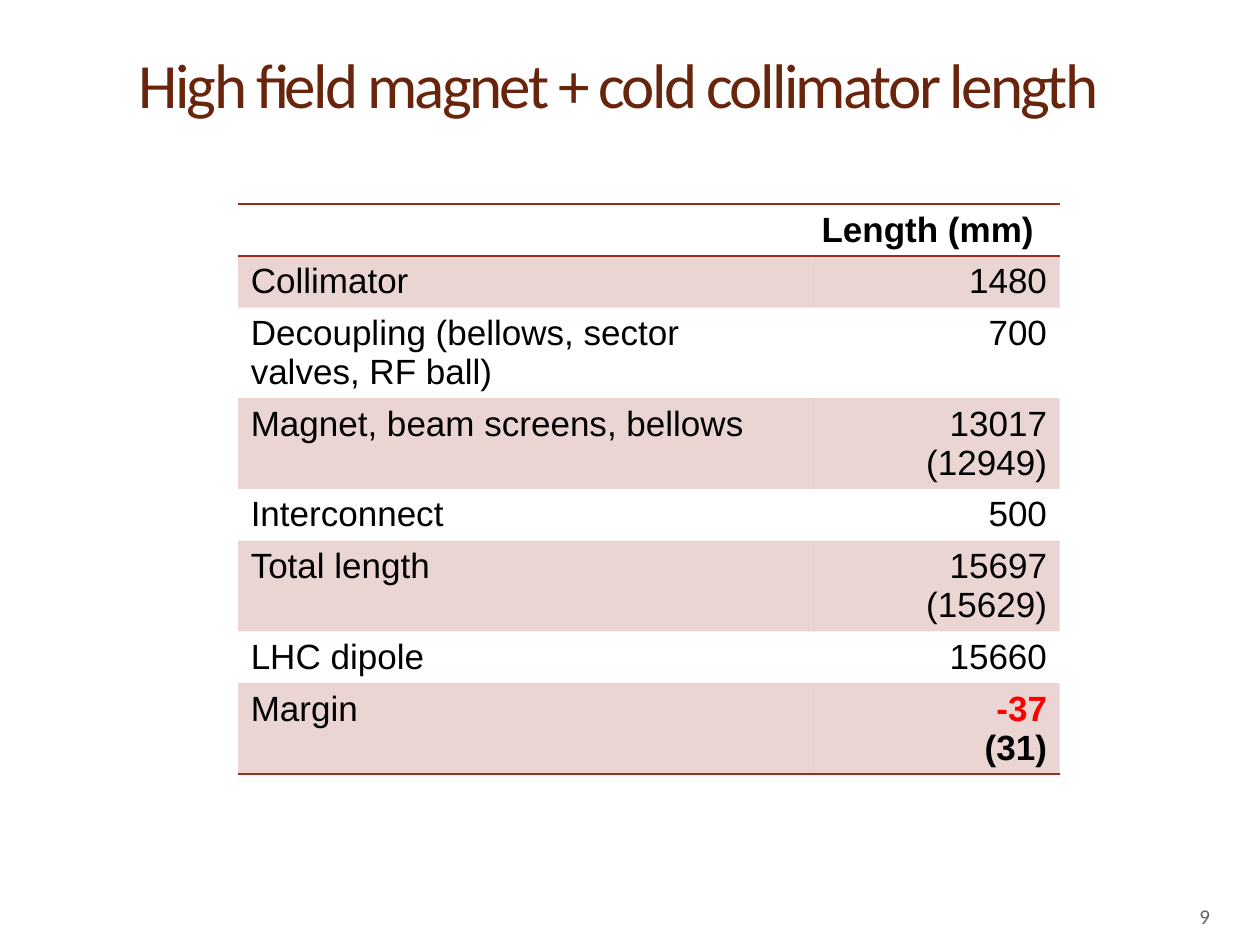
from dataclasses import dataclass

from lxml.etree import SubElement
from pptx import Presentation
from pptx.dml.color import RGBColor as Rgb
from pptx.enum.text import MSO_ANCHOR as Anchor, PP_ALIGN as Align
from pptx.oxml.ns import qn
from pptx.util import Inches, Pt

COLORS = {"title": "69240C", "rule": "9B2D1F", "text": "000000",
          "alert": "FF0000", "page": "696464"}
WIDE, HIGH = 10, 7.5
COLS = (4.53, 1.99)
ROW = 0.41
PLAIN = "{2D5ABB26-0587-4C30-8999-92F81FD0307C}"


@dataclass
class Run:
    text: str
    size: float = 20
    font: str = "Arial"
    color: str = "text"
    bold: bool = False


@dataclass
class Item:
    name: str
    values: tuple[Run, ...]


ITEMS = [
    Item("", (Run("Length (mm)", bold=True),)),
    Item("Collimator", (Run("1480"),)),
    Item("Decoupling (bellows, sector valves, RF ball)", (Run("700"),)),
    Item("Magnet, beam screens, bellows", (Run("13017 (12949)"),)),
    Item("Interconnect", (Run("500"),)),
    Item("Total length", (Run("15697 (15629)"),)),
    Item("LHC dipole", (Run("15660"),)),
    Item("Margin", (Run("-37", color="alert", bold=True),
                    Run("(31)", bold=True))),
]


def write(frame, runs: tuple[Run, ...], align=Align.LEFT):
    """Put each run in a paragraph of its own."""
    for i, item in enumerate(runs):
        para = frame.add_paragraph() if i else frame.paragraphs[0]
        para.alignment = align
        run = para.add_run()
        run.text = item.text
        font = run.font
        font.size, font.name, font.bold = Pt(item.size), item.font, item.bold
        font.color.rgb = Rgb.from_string(COLORS[item.color])


def place(shape, left: float, top: float, width: float, height: float):
    shape.left, shape.top = Inches(left), Inches(top)
    shape.width, shape.height = Inches(width), Inches(height)


def add_title(slide):
    title = slide.shapes.title
    place(title, 0.1 * WIDE, 0.31, 0.85 * WIDE, 1)
    frame = title.text_frame
    frame.vertical_anchor = Anchor.TOP
    write(frame, (Run("High field magnet + cold collimator length",
                      36, "Calibri", "title"),))
    frame.paragraphs[0].runs[0].font._element.set("spc", "-150")


def rule(cell, side: str):
    """Draw a thin line on one side of a cell, before its fill is set."""
    line = SubElement(cell._tc.get_or_add_tcPr(), qn("a:" + side), w="12700")
    fill = SubElement(line, qn("a:solidFill"))
    SubElement(fill, qn("a:srgbClr"), val=COLORS["rule"])


def paint(cell, band: bool):
    if not band:
        cell.fill.background()
        return
    cell.fill.solid()
    cell.fill.fore_color.rgb = Rgb.from_string(COLORS["rule"])
    tint = cell._tc.tcPr.find(".//" + qn("a:solidFill") + "[last()]/" + qn("a:srgbClr"))
    for node in cell._tc.tcPr.findall(qn("a:solidFill")):
        tint = node.find(qn("a:srgbClr"))
    SubElement(tint, qn("a:alpha"), val="20000")


def add_lengths(slide):
    count = len(ITEMS)
    frame = slide.shapes.add_table(count, len(COLS), Inches(1.89), Inches(1.62),
                                   Inches(sum(COLS)), Inches(ROW * count))
    table = frame.table
    table.first_row = table.horz_banding = False
    table._tbl.tblPr.find(qn("a:tableStyleId")).text = PLAIN
    for col, width in zip(table.columns, COLS):
        col.width = Inches(width)
    for i, item in enumerate(ITEMS):
        sides = {0: ("lnT", "lnB"), count - 1: ("lnB",)}.get(i, ())
        for j, runs in enumerate(((Run(item.name),), item.values)):
            cell = table.cell(i, j)
            for side in sides:
                rule(cell, side)
            paint(cell, i % 2 == 1)
            if runs[0].text:
                write(cell.text_frame, runs, Align.RIGHT if i and j else Align.LEFT)


def add_page(slide):
    box = slide.shapes.add_textbox(0, 0, 0, 0)
    place(box, 9.42, 7.02, 0.05 * WIDE, 0.4)
    frame = box.text_frame
    frame.word_wrap = True
    frame.vertical_anchor = Anchor.BOTTOM
    write(frame, (Run("9", 12, "Calibri", "page"),))


def main():
    deck = Presentation()
    deck.slide_width, deck.slide_height = Inches(WIDE), Inches(HIGH)
    slide = deck.slides.add_slide(deck.slide_layouts[5])
    add_title(slide)
    add_lengths(slide)
    add_page(slide)
    deck.save("out.pptx")


if __name__ == "__main__":
    main()
